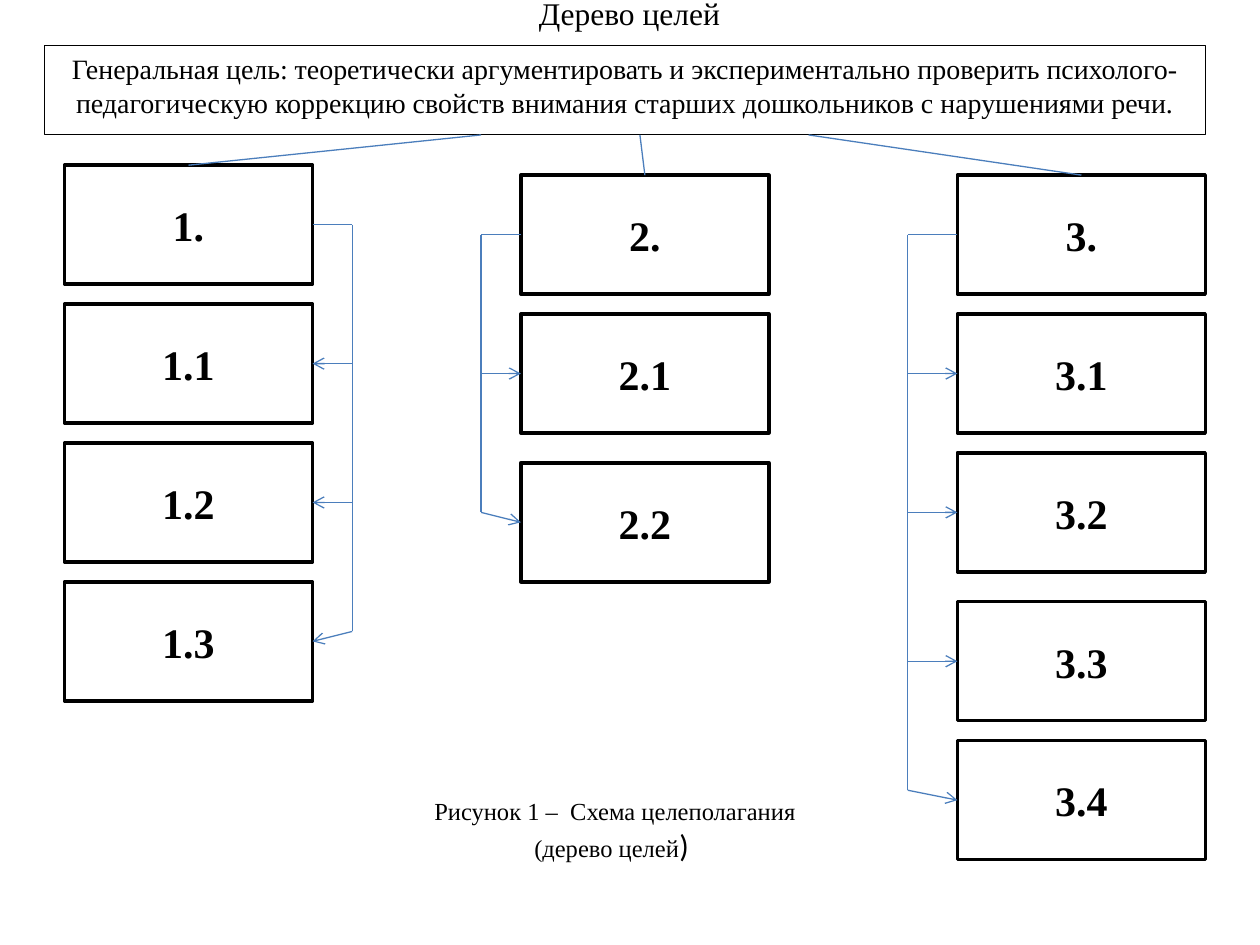
from lxml import etree
from pptx import Presentation
from pptx.dml.color import RGBColor
from pptx.enum.shapes import MSO_CONNECTOR as CONN, MSO_SHAPE as SHAPE
from pptx.enum.text import MSO_ANCHOR as ANCHOR, MSO_AUTO_SIZE as AUTO, PP_ALIGN as ALIGN
from pptx.oxml.ns import qn
from pptx.util import Cm, Pt

BLACK = RGBColor(0x00, 0x00, 0x00)
WHITE = RGBColor(0xFF, 0xFF, 0xFF)
BLUE = RGBColor(0x4B, 0x7E, 0xBC)
SERIF = "Times New Roman"

BOX_W, BOX_H, PITCH = 5, 2.4, 2.8
STEP = 0.2


def format_run(r, size, bold=False, font=SERIF):
    r.font.name = font
    r.font.size = Pt(size)
    r.font.bold = bold
    r.font.color.rgb = BLACK


def add_line(s, x1, y1, x2, y2, arrow=False):
    line = s.shapes.add_connector(CONN.STRAIGHT, Cm(x1), Cm(y1), Cm(x2), Cm(y2))
    line.line.color.rgb = BLUE
    line.line.width = Pt(0.75)
    if arrow:
        etree.SubElement(line.line._get_or_add_ln(), qn("a:tailEnd"), type="arrow")
    etree.SubElement(line._element.spPr, qn("a:effectLst"))


def add_box(s, x, y, w, h, text, size, border, bold=False, anchor=ANCHOR.MIDDLE):
    sp = s.shapes.add_shape(SHAPE.RECTANGLE, Cm(x), Cm(y), Cm(w), Cm(h))
    sp.shadow.inherit = False
    sp.fill.solid()
    sp.fill.fore_color.rgb = WHITE
    sp.line.color.rgb = BLACK
    sp.line.width = Pt(border)
    tf = sp.text_frame
    tf.word_wrap = True
    tf.vertical_anchor = anchor
    p = tf.paragraphs[0]
    p.text = text
    p.alignment = ALIGN.CENTER
    format_run(p.runs[0], size, bold)


def add_title(s, x, y, w, h):
    sp = s.shapes.title
    sp.left, sp.top, sp.width, sp.height = Cm(x), Cm(y), Cm(w), Cm(h)
    tf = sp.text_frame
    tf.text = "Дерево целей"
    tf.auto_size = AUTO.NONE
    tf.vertical_anchor = ANCHOR.TOP
    p = tf.paragraphs[0]
    p.alignment = ALIGN.CENTER
    format_run(p.runs[0], 18)


def add_general_goal(s, x, y, w, h):
    text = ("Генеральная цель: теоретически аргументировать и экспериментально "
            "проверить психолого-педагогическую коррекцию свойств внимания "
            "старших дошкольников с нарушениями речи.")
    add_box(s, x, y, w, h, text, 16, 0.75, anchor=ANCHOR.TOP)


def add_branch(s, x, y, number, children, trunk_x, wide_gap_at, root):
    tops = [y + PITCH * k + (STEP if k >= wide_gap_at else 0)
            for k in range(children + 1)]
    mids = [top + BOX_H / 2 for top in tops]
    edge = x if trunk_x < x else x + BOX_W
    for k, top in enumerate(tops):
        add_box(s, x, top, BOX_W, BOX_H, f"{number}.{k or ''}", 24, 2, bold=True)
    add_line(s, x + BOX_W / 2, y, *root)
    add_line(s, edge, mids[0], trunk_x, mids[0])
    add_line(s, trunk_x, mids[0], trunk_x, mids[-1] - STEP)
    for mid in mids[1:]:
        start = mid - STEP if mid == mids[-1] else mid
        add_line(s, trunk_x, start, edge, mid, arrow=True)


def add_caption(s, x, y, w, h):
    tf = s.shapes.add_textbox(Cm(x), Cm(y), Cm(w), Cm(h)).text_frame
    tf.word_wrap = True
    p = tf.paragraphs[0]
    p.alignment = ALIGN.CENTER
    for text, size, font in (
        ("Рисунок 1 –  Схема целеполагания (дерево целей", 14, SERIF),
        (") ", 18, "Calibri"),
    ):
        r = p.add_run()
        r.text = text
        format_run(r, size, font=font)


def main():
    prs = Presentation()
    prs.slide_width, prs.slide_height = Cm(25.4), Cm(19.05)
    s = prs.slides.add_slide(prs.slide_layouts[5])
    goal_y, goal_h = 0.92, 1.8
    goal_bottom = goal_y + goal_h
    add_title(s, 9.14, -0.25, 7.1, 1.8)
    add_general_goal(s, 0.9, goal_y, 23.4, goal_h)
    add_caption(s, 7.9, 15.93, 9, 1.63)
    for x, y, number, children, trunk_x, wide_gap_at, root_x in (
        (1.3, 3.33, 1, 3, 7.1, 4, 9.7),
        (10.5, 3.53, 2, 2, 9.7, 2, 12.9),
        (19.3, 3.53, 3, 4, 18.3, 3, 16.3),
    ):
        add_branch(s, x, y, number, children, trunk_x, wide_gap_at,
                   (root_x, goal_bottom))
    prs.save("out.pptx")


if __name__ == "__main__":
    main()
